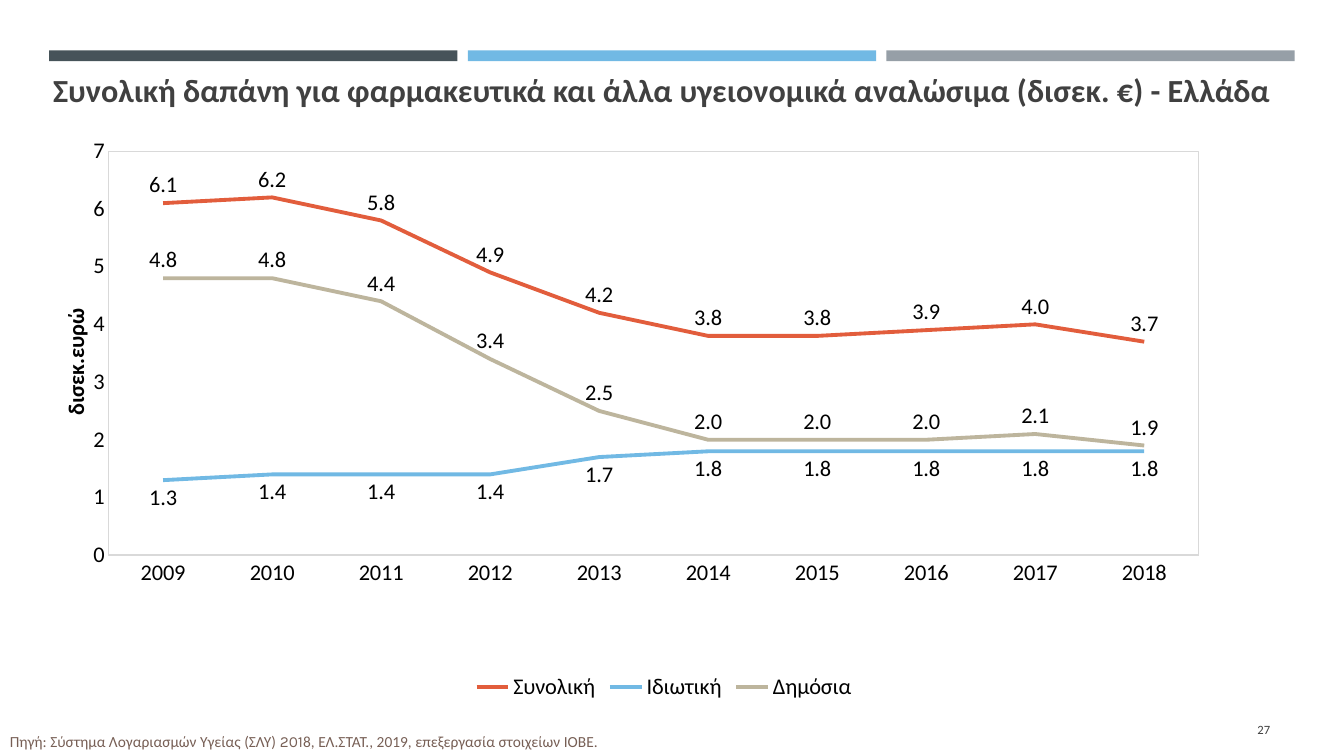
from lxml import etree
from pptx import Presentation
from pptx.chart.data import CategoryChartData
from pptx.dml.color import RGBColor
from pptx.enum.chart import XL_AXIS_CROSSES as Crosses, XL_CHART_TYPE as ChartType
from pptx.enum.chart import XL_LABEL_POSITION as LabelPosition, XL_LEGEND_POSITION as LegendPosition
from pptx.enum.chart import XL_TICK_MARK as TickMark
from pptx.enum.shapes import MSO_SHAPE as Preset
from pptx.enum.text import MSO_ANCHOR as Anchor, PP_ALIGN as Align
from pptx.oxml import parse_xml
from pptx.oxml.ns import nsdecls, qn
from pptx.util import Cm, Pt

SLATE = RGBColor(0x46, 0x53, 0x59)
BLUE = RGBColor(0x71, 0xB9, 0xE4)
GREY = RGBColor(0x96, 0x9F, 0xA7)
ORANGE = RGBColor(0xE2, 0x5D, 0x3C)
SAND = RGBColor(0xBD, 0xB5, 0x9D)
DARK = RGBColor(0x40, 0x40, 0x40)
BROWN = RGBColor(0x77, 0x5F, 0x55)
BLACK = RGBColor(0, 0, 0)
FRAME = RGBColor(0xD9, 0xD9, 0xD9)


def add_text(slide, left, top, width, height, runs, size, color, anchor, align, bold=False):
    shape = slide.shapes.add_textbox(Cm(left), Cm(top), Cm(width), Cm(height))
    frame = shape.text_frame
    frame.word_wrap = True
    frame.vertical_anchor = anchor
    paragraph = frame.paragraphs[0]
    paragraph.alignment = align
    for text, font_name in runs:
        run = paragraph.add_run()
        run.text = text
        run.font.name = font_name
        run.font.size = Pt(size)
        run.font.bold = bold
        run.font.color.rgb = color
    return paragraph


presentation = Presentation()
presentation.slide_width = Cm(33.87)
presentation.slide_height = Cm(19.05)
slide = presentation.slides.add_slide(presentation.slide_layouts[6])

for index, color in enumerate((SLATE, BLUE, GREY)):
    bar = slide.shapes.add_shape(
        Preset.RECTANGLE, Cm(1.24 + 10.55 * index), Cm(1.27), Cm(10.29), Cm(0.27))
    bar.shadow.inherit = False
    bar.fill.solid()
    bar.fill.fore_color.rgb = color
    bar.line.fill.background()

add_text(slide, 1.09, 1.65, 31.52, 1.22,
         [("Συνολική δαπάνη για φαρμακευτικά και άλλα υγειονομικά αναλώσιμα (δισεκ. €) - Ελλάδα",
           "Calibri")], 23, DARK, Anchor.BOTTOM, Align.LEFT, True)

spending = [
    ("Συνολική", (6.1, 6.2, 5.8, 4.9, 4.2, 3.8, 3.8, 3.9, 4.0, 3.7), ORANGE, LabelPosition.ABOVE),
    ("Iδιωτική", (1.3, 1.4, 1.4, 1.4, 1.7, 1.8, 1.8, 1.8, 1.8, 1.8), BLUE, LabelPosition.BELOW),
    ("Δημόσια", (4.8, 4.8, 4.4, 3.4, 2.5, 2.0, 2.0, 2.0, 2.1, 1.9), SAND, LabelPosition.ABOVE),
]
chart_data = CategoryChartData()
chart_data.categories = [str(year) for year in range(2009, 2019)]
for name, values, color, position in spending:
    chart_data.add_series(name, values)
chart = slide.shapes.add_chart(
    ChartType.LINE, Cm(1.42), Cm(3.38), Cm(30.63), Cm(14.4), chart_data).chart
chart.has_title = False
chart.font.name = "Calibri"
chart.font.size = Pt(16)
chart.font.color.rgb = BLACK
chart.has_legend = True
chart.legend.position = LegendPosition.BOTTOM
chart.legend.include_in_layout = False
chart.plots[0].vary_by_categories = False

for series, (name, values, color, position) in zip(chart.plots[0].series, spending):
    series.smooth = False
    series.format.line.color.rgb = color
    series.format.line.width = Pt(2.75)
    labels = series.data_labels
    labels.show_value = True
    labels.number_format = "0.0"
    labels.number_format_is_linked = False
    labels.position = position

years = chart.category_axis
years.major_tick_mark = TickMark.NONE
years.format.line.color.rgb = FRAME
years.format.line.width = Pt(1)
years.crosses = Crosses.MAXIMUM

billions = chart.value_axis
billions.minimum_scale = 0
billions.maximum_scale = 7
billions.major_unit = 1
billions.has_major_gridlines = False
billions.major_tick_mark = TickMark.NONE
billions.format.line.fill.background()
billions.tick_labels.number_format = "#,##0"
billions.tick_labels.number_format_is_linked = False
axis_frame = billions.axis_title.text_frame
run = axis_frame.paragraphs[0].add_run()
run.text = "δισεκ.ευρώ"
run.font.name = "Calibri"
run.font.size = Pt(16)
run.font.bold = True
run.font.color.rgb = BLACK
body = billions.axis_title._element.find(".//" + qn("a:bodyPr"))
body.set("rot", "-5400000")
body.set("vert", "horz")

plot_area = chart._chartSpace.chart.plotArea
for layout in plot_area.findall(qn("c:layout")):
    plot_area.remove(layout)
layout = parse_xml(f"<c:layout {nsdecls('c')}><c:manualLayout/></c:layout>")
settings = [("layoutTarget", "inner"), ("xMode", "edge"), ("yMode", "edge"),
            ("x", "0.043"), ("y", "0.03"), ("w", "0.897"), ("h", "0.707")]
for tag, value in settings:
    etree.SubElement(layout[0], qn("c:" + tag)).set("val", value)
plot_area.insert(0, layout)
plot_area.append(parse_xml(
    f"<c:spPr {nsdecls('c', 'a')}><a:noFill/><a:ln w='9525'><a:solidFill>"
    f"<a:srgbClr val='{FRAME}'/></a:solidFill></a:ln></c:spPr>"))

add_text(slide, 29.34, 17.86, 2.92, 1.02, [("27", "Calibri")], 9, DARK, Anchor.MIDDLE, Align.RIGHT)

source = add_text(slide, 0, 18.29, 25.35, 0.76,
                  [("Πηγή: Σύστημα Λογαριασμών Υγείας (ΣΛΥ) ", "Calibri"), ("201", "Karla"),
                   ("8, ΕΛ.ΣΤΑΤ., 2019, επεξεργασία στοιχείων ΙΟΒΕ.", "Calibri")],
                  11, BROWN, Anchor.TOP, Align.JUSTIFY)
source.line_spacing = 1.07
source.space_after = Pt(8)

presentation.save("out.pptx")
